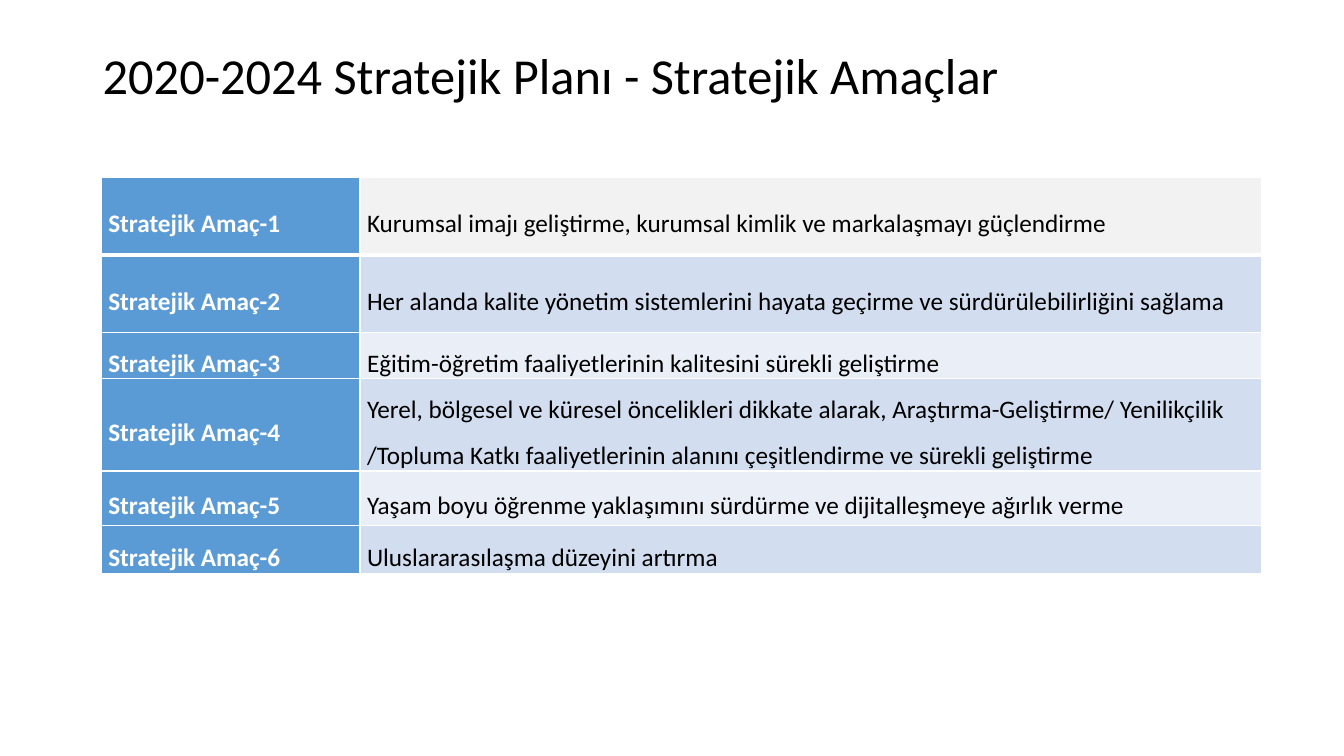
import pptx
import pptx.dml.color
import pptx.enum.text
import pptx.oxml
import pptx.oxml.ns
import pptx.util

Pt = pptx.util.Pt
FONT = "Calibri"
TITLE = "2020-2024 Stratejik Planı - Stratejik Amaçlar"
COLUMN_SHARES = (0.223, 0.777)
LABEL_FILL = "5B9BD5"

# Each goal: row height, fill of the description, description
GOALS = [
    (55.4, "F2F2F2", "Kurumsal imajı geliştirme, kurumsal kimlik ve markalaşmayı güçlendirme"),
    (55.4, "D2DEEF", "Her alanda kalite yönetim sistemlerini hayata geçirme ve sürdürülebilirliğini sağlama"),
    (28, "EAEFF7", "Eğitim-öğretim faaliyetlerinin kalitesini sürekli geliştirme"),
    (55.4, "D2DEEF", "Yerel, bölgesel ve küresel öncelikleri dikkate alarak, Araştırma-Geliştirme/ Yenilikçilik "
                     "/Topluma Katkı faaliyetlerinin alanını çeşitlendirme ve sürekli geliştirme"),
    (39, "EAEFF7", "Yaşam boyu öğrenme yaklaşımını sürdürme ve dijitalleşmeye ağırlık verme"),
    (34.6, "D2DEEF", "Uluslararasılaşma düzeyini artırma"),
]


def color(hex_value):
    return pptx.dml.color.RGBColor.from_string(hex_value)


def format_text(para, size, hex_value, bold, spacing):
    para.alignment = pptx.enum.text.PP_ALIGN.LEFT
    para.line_spacing = spacing
    for span in para.runs:
        span.font.name = FONT
        span.font.size = Pt(size)
        span.font.bold = bold
        span.font.color.rgb = color(hex_value)


def set_borders(cell, widths):
    properties = cell._tc.get_or_add_tcPr()
    for side, width in widths.items():
        properties.append(pptx.oxml.parse_xml(
            f'<a:ln{side} {pptx.oxml.ns.nsdecls("a")} w="{Pt(width)}">'
            '<a:solidFill><a:srgbClr val="FFFFFF"/></a:solidFill>'
            f'</a:ln{side}>'))


def fill_cell(cell, text, fill, text_color, bold, borders):
    cell.text_frame.text = text
    format_text(cell.text_frame.paragraphs[0], 18, text_color, bold, 1.5)
    cell.vertical_anchor = pptx.enum.text.MSO_ANCHOR.MIDDLE
    cell.margin_left = cell.margin_right = Pt(5)
    cell.margin_top = cell.margin_bottom = 0
    set_borders(cell, borders)
    cell.fill.solid()
    cell.fill.fore_color.rgb = color(fill)


def add_title(page, left, top, width, height):
    box = page.shapes.title
    box.left, box.top, box.width, box.height = Pt(left), Pt(top), Pt(width), Pt(height)
    frame = box.text_frame
    frame.text = TITLE
    frame.word_wrap = True
    frame.auto_size = pptx.enum.text.MSO_AUTO_SIZE.NONE
    frame.vertical_anchor = pptx.enum.text.MSO_ANCHOR.TOP
    format_text(frame.paragraphs[0], 36, "000000", False, 0.9)


def add_goal_table(page, left, top, width):
    height = sum(goal[0] for goal in GOALS)
    table = page.shapes.add_table(
        len(GOALS), len(COLUMN_SHARES), Pt(left), Pt(top), Pt(width), Pt(height)).table
    for column, share in zip(table.columns, COLUMN_SHARES):
        column.width = Pt(width * share)
    for index, (row_height, fill, description) in enumerate(GOALS):
        table.rows[index].height = Pt(row_height)
        # A thick rule sets off the first row
        borders = {"L": 1, "R": 1, "T": 3 if index == 1 else 1, "B": 3 if index == 0 else 1}
        fill_cell(table.cell(index, 0), f"Stratejik Amaç-{index + 1}",
                  LABEL_FILL, "FFFFFF", True, borders)
        fill_cell(table.cell(index, 1), description, fill, "000000", False, borders)


def main():
    deck = pptx.Presentation()
    deck.slide_width, deck.slide_height = Pt(960), Pt(540)
    page = deck.slides.add_slide(deck.slide_layouts.get_by_name("Title Only"))
    add_title(page, 66.2, 33, 828, 55.4)
    add_goal_table(page, 72.4, 126.8, 828.7)
    deck.save("out.pptx")


if __name__ == "__main__":
    main()
